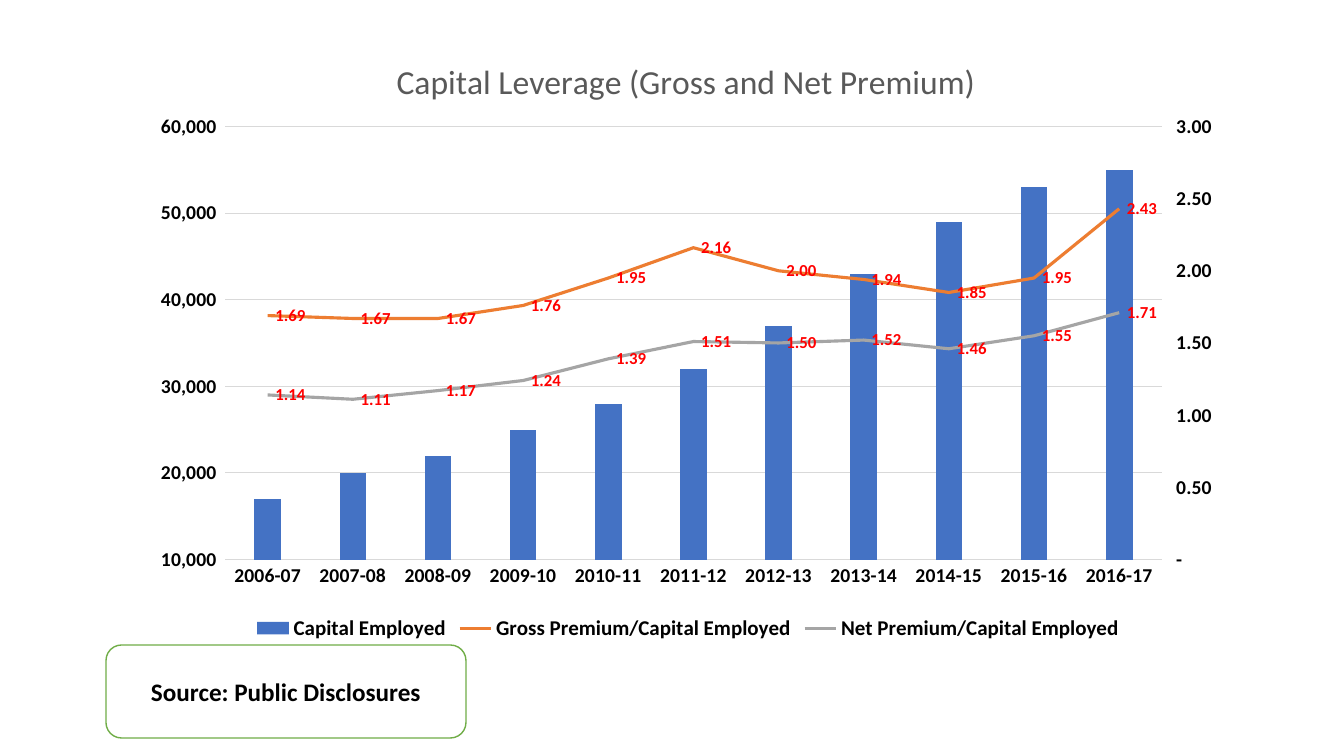
from pptx import Presentation
from pptx import util as u
from pptx.chart import axis as chart_axis
from pptx.chart import data as chart_data
from pptx.dml.color import RGBColor
from pptx.enum import chart as ch
from pptx.enum import shapes, text
from pptx.oxml import parse_xml
from pptx.oxml.ns import qn

WHITE = RGBColor(0xFF, 0xFF, 0xFF)
BLACK = RGBColor(0x00, 0x00, 0x00)
TITLE_GREY = RGBColor(0x59, 0x59, 0x59)
GRID_GREY = RGBColor(0xD9, 0xD9, 0xD9)
BLUE = RGBColor(0x44, 0x72, 0xC4)
ORANGE = RGBColor(0xED, 0x7D, 0x31)
GREY = RGBColor(0xA5, 0xA5, 0xA5)
RED = RGBColor(0xFF, 0x00, 0x00)
GREEN = RGBColor(0x70, 0xAD, 0x47)

EMU_PER_PX = 914400 / 100.8
CHART_NS = 'xmlns:c="http://schemas.openxmlformats.org/drawingml/2006/chart"'
WHOLE_FORMAT = '_(* #,##0_);_(* \\(#,##0\\);_(* "-"??_);_(@_)'
RATIO_FORMAT = '_(* #,##0.00_);_(* \\(#,##0.00\\);_(* "-"??_);_(@_)'

YEARS = [f"{year}-{(year + 1) % 100:02d}" for year in range(2006, 2017)]
CAPITAL = [17000, 20000, 22000, 25000, 28000, 32000,
           37000, 43000, 49000, 53000, 55000]
GROSS = [1.69, 1.67, 1.67, 1.76, 1.95, 2.16, 2.00, 1.94, 1.85, 1.95, 2.43]
NET = [1.14, 1.11, 1.17, 1.24, 1.39, 1.51, 1.50, 1.52, 1.46, 1.55, 1.71]

LINE_CHART = f"""<c:lineChart {CHART_NS}>
  <c:grouping val="standard"/><c:varyColors val="0"/>
  <c:marker val="1"/><c:axId val="5001"/><c:axId val="5002"/>
</c:lineChart>"""
RIGHT_AXIS = f"""<c:valAx {CHART_NS}>
  <c:axId val="5002"/><c:scaling><c:orientation val="minMax"/></c:scaling>
  <c:delete val="0"/><c:axPos val="r"/>
  <c:majorTickMark val="out"/><c:minorTickMark val="none"/>
  <c:tickLblPos val="nextTo"/><c:crossAx val="5001"/><c:crosses val="max"/>
</c:valAx>"""
HIDDEN_AXIS = f"""<c:catAx {CHART_NS}>
  <c:axId val="5001"/><c:scaling><c:orientation val="minMax"/></c:scaling>
  <c:delete val="1"/><c:axPos val="b"/><c:crossAx val="5002"/>
</c:catAx>"""


class LeverageSlide:
    """Holds the style and the current slide."""

    font_name = "Calibri"

    def __init__(self, presentation):
        self.slide = presentation.slides.add_slide(presentation.slide_layouts[6])

    @staticmethod
    def px(*lengths):
        return [u.Emu(round(length * EMU_PER_PX)) for length in lengths]

    def style(self, font, size, color=BLACK, bold=True):
        font.name = self.font_name
        font.size = u.Pt(size)
        font.bold = bold
        font.color.rgb = color

    def combo_chart(self, left, top, width, height, title, bars, lines):
        data = chart_data.CategoryChartData()
        data.categories = YEARS
        for name, values, _ in [bars, *lines]:
            data.add_series(name, values)
        chart = self.slide.shapes.add_chart(
            ch.XL_CHART_TYPE.COLUMN_CLUSTERED,
            *self.px(left, top, width, height), data).chart
        self.style(chart.font, 10, bold=False)

        # Title and legend
        chart.has_title = True
        title_frame = chart.chart_title.text_frame
        title_frame.text = title
        self.style(title_frame.paragraphs[0].runs[0].font, 24, TITLE_GREY, False)
        self.place(chart.chart_title._element, 0.23, 0.03)
        chart.has_legend = True
        chart.legend.position = ch.XL_LEGEND_POSITION.BOTTOM
        chart.legend.include_in_layout = False
        self.style(chart.legend.font, 15)

        # Columns
        columns = chart.plots[0]
        columns.gap_width, columns.overlap = 219, -27
        columns.vary_by_categories = False
        fill = columns.series[0].format.fill
        fill.solid()
        fill.fore_color.rgb = bars[2]

        # Left and bottom axes
        self.axis(chart.category_axis)
        chart.category_axis.format.line.color.rgb = GRID_GREY
        chart.category_axis.format.line.width = u.Pt(0.75)
        self.value_axis(chart.value_axis, 10000, 60000, 10000, WHOLE_FORMAT)
        gridlines = chart.value_axis.major_gridlines.format.line
        gridlines.color.rgb = GRID_GREY
        gridlines.width = u.Pt(0.75)

        self.ratio_lines(chart, lines)
        self.place(chart._chartSpace.chart.plotArea, 0.08, 0.15, 0.85, 0.71)

    def ratio_lines(self, chart, lines):
        # Move the ratio series to a line plot on a second pair of axes
        plot_area = chart._chartSpace.chart.plotArea
        column_plot = plot_area.find(qn("c:barChart"))
        line_plot = parse_xml(LINE_CHART)
        column_plot.addnext(line_plot)
        marker = line_plot.find(qn("c:marker"))
        for series in column_plot.findall(qn("c:ser"))[1:]:
            for bar_setting in series.findall(qn("c:invertIfNegative")):
                series.remove(bar_setting)
            marker.addprevious(series)
        right_axis = parse_xml(RIGHT_AXIS)
        plot_area.find(qn("c:valAx")).addnext(right_axis)
        right_axis.addnext(parse_xml(HIDDEN_AXIS))
        axis = chart_axis.ValueAxis(right_axis)
        self.value_axis(axis, 0, 3, 0.5, RATIO_FORMAT)
        axis.major_tick_mark = ch.XL_TICK_MARK.OUTSIDE

        for series, (_, _, color) in zip(chart.plots[1].series, lines):
            series.smooth = False
            series.marker.style = ch.XL_MARKER_STYLE.NONE
            series.format.line.color.rgb = color
            series.format.line.width = u.Pt(2.25)
            labels = series.data_labels
            labels.show_value = True
            labels.position = ch.XL_LABEL_POSITION.RIGHT
            labels.number_format = RATIO_FORMAT
            labels.number_format_is_linked = False
            self.style(labels.font, 12, RED)

    def axis(self, axis):
        axis.major_tick_mark = ch.XL_TICK_MARK.NONE
        self.style(axis.tick_labels.font, 14)

    def value_axis(self, axis, minimum, maximum, step, number_format):
        self.axis(axis)
        axis.minimum_scale, axis.maximum_scale = minimum, maximum
        axis.major_unit = step
        axis.tick_labels.number_format = number_format
        axis.tick_labels.number_format_is_linked = False
        axis.format.line.fill.background()

    @staticmethod
    def place(element, x, y, width=None, height=None):
        # Fix a chart part at fractions of the chart area
        parts = ['<c:layoutTarget val="inner"/>'] if width else []
        parts += ['<c:xMode val="edge"/><c:yMode val="edge"/>']
        sizes = {"x": x, "y": y, "w": width, "h": height}
        parts += [f'<c:{tag} val="{size}"/>' for tag, size in sizes.items() if size]
        layout = parse_xml(f'<c:layout {CHART_NS}><c:manualLayout>'
                           f'{"".join(parts)}</c:manualLayout></c:layout>')
        for old in element.findall(qn("c:layout")):
            element.remove(old)
        title_text = element.find(qn("c:tx"))
        if title_text is None:
            element.insert(0, layout)
        else:
            title_text.addnext(layout)

    def rounded_box(self, left, top, width, height, words):
        shape = self.slide.shapes.add_shape(
            shapes.MSO_SHAPE.ROUNDED_RECTANGLE, *self.px(left, top, width, height))
        shape.shadow.inherit = False
        shape.fill.solid()
        shape.fill.fore_color.rgb = WHITE
        shape.line.color.rgb = GREEN
        shape.line.width = u.Pt(1)
        frame = shape.text_frame
        frame.text = words
        frame.word_wrap = True
        frame.vertical_anchor = text.MSO_ANCHOR.MIDDLE
        paragraph = frame.paragraphs[0]
        paragraph.alignment = text.PP_ALIGN.CENTER
        self.style(paragraph.runs[0].font, 18)


def main():
    presentation = Presentation()
    presentation.slide_width, presentation.slide_height = LeverageSlide.px(1344, 756)
    slide = LeverageSlide(presentation)
    slide.combo_chart(
        137, 35, 1102, 610, "Capital Leverage (Gross and Net Premium)",
        bars=("Capital Employed", CAPITAL, BLUE),
        lines=[("Gross Premium/Capital Employed", GROSS, ORANGE),
               ("Net Premium/Capital Employed", NET, GREY)])
    slide.rounded_box(106, 645, 360, 93, "Source: Public Disclosures")
    presentation.save("out.pptx")


if __name__ == "__main__":
    main()
